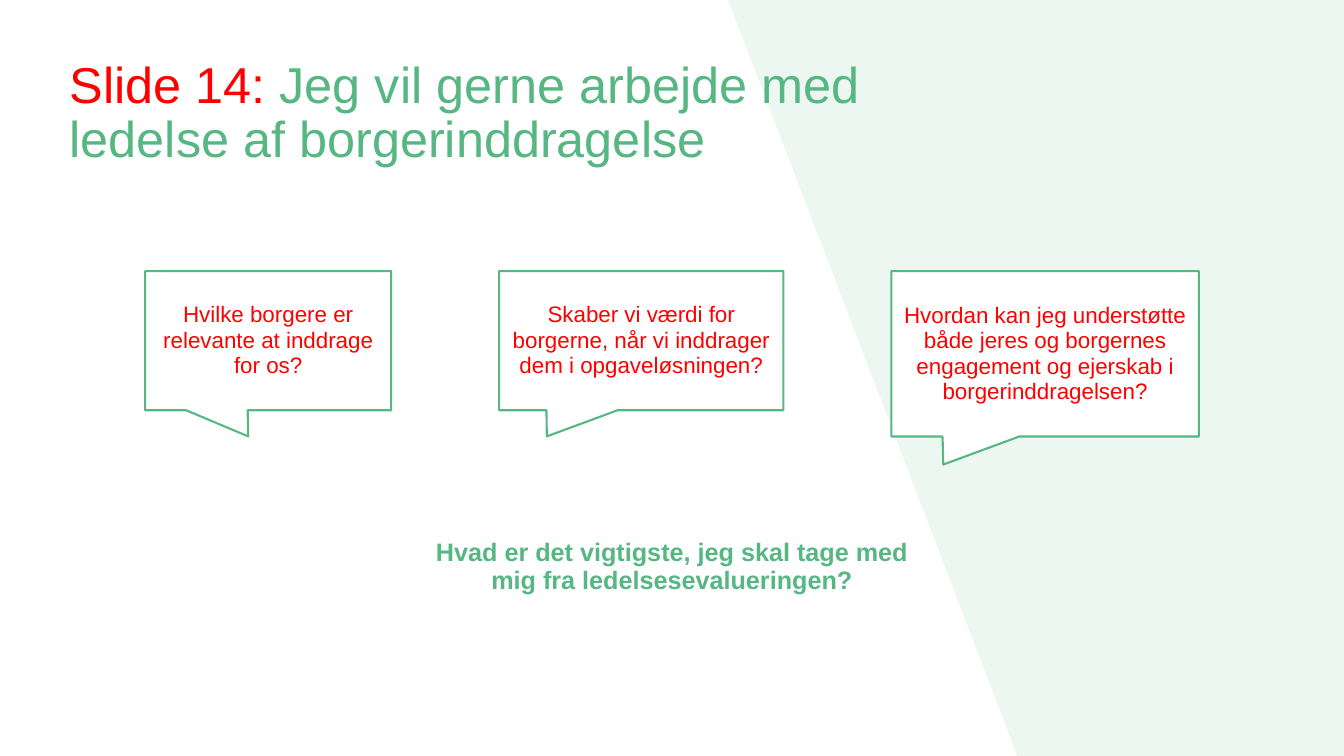
from lxml import etree
from pptx import Presentation
from pptx.dml.color import RGBColor
from pptx.enum import shapes, text
from pptx.oxml.ns import qn
from pptx.util import Inches, Pt

COLOURS = {"green": "56B783", "red": "FF0000", "white": "FFFFFF"}
FONT = "Arial"

# width, height, pointer adjustments, question
CALLOUTS = [
    (2.44, 1.38, (-0.081, 0.688), "Hvilke borgere er relevante at inddrage for os?"),
    (2.82, 1.38, (-0.332, 0.688),
     "Skaber vi værdi for borgerne, når vi inddrager dem i opgaveløsningen?"),
    (3.05, 1.64, (-0.331, 0.67),
     "Hvordan kan jeg understøtte både jeres og borgernes engagement "
     "og ejerskab i borgerinddragelsen?"),
]


def rgb(name):
    return RGBColor.from_string(COLOURS[name])


def format_run(run, size, colour, bold=False):
    run.font.name = FONT
    run.font.size = Pt(size)
    run.font.bold = bold
    run.font.color.rgb = rgb(colour)


def set_centred_text(shape, wording, size, colour, bold=False):
    frame = shape.text_frame
    frame.word_wrap = True
    frame.text = wording
    paragraph = frame.paragraphs[0]
    paragraph.alignment = text.PP_ALIGN.CENTER
    paragraph.line_spacing = 0.95
    format_run(paragraph.runs[0], size, colour, bold)


def add_background_band(slide, left, top, width, height):
    """Draw the pale green area whose left edge slants to the right."""
    slant = 2.87
    corners = [(left + slant, top + height), (left + width, top + height),
               (left + width, top)]
    builder = slide.shapes.build_freeform(Inches(left), Inches(top), scale=1.0)
    builder.add_line_segments([(Inches(x), Inches(y)) for x, y in corners])
    band = builder.convert_to_shape()
    band.shadow.inherit = False
    band.line.fill.background()
    band.fill.solid()
    band.fill.fore_color.rgb = rgb("green")
    colour = band.fill._xPr.find(qn("a:solidFill"))[0]
    etree.SubElement(colour, qn("a:alpha"), val="10000")


def place_title(slide, left, top, width, height):
    title = slide.shapes.title
    title.left, title.top = Inches(left), Inches(top)
    title.width, title.height = Inches(width), Inches(height)
    frame = title.text_frame
    frame.auto_size = text.MSO_AUTO_SIZE.NONE
    frame.vertical_anchor = text.MSO_ANCHOR.MIDDLE
    paragraph = frame.paragraphs[0]
    paragraph.alignment = text.PP_ALIGN.LEFT
    paragraph.line_spacing = 0.9
    for wording, colour in (
            ("Slide 14:", "red"),
            (" Jeg vil gerne arbejde med ledelse af borgerinddragelse", "green")):
        run = paragraph.add_run()
        run.text = wording
        format_run(run, 36, colour)


def add_callouts(slide, left, top, gap):
    for width, height, pointer, question in CALLOUTS:
        callout = slide.shapes.add_shape(
            shapes.MSO_SHAPE.RECTANGULAR_CALLOUT,
            Inches(left), Inches(top), Inches(width), Inches(height))
        callout.adjustments[0], callout.adjustments[1] = pointer
        callout.shadow.inherit = False
        callout.fill.solid()
        callout.fill.fore_color.rgb = rgb("white")
        callout.line.color.rgb = rgb("green")
        callout.line.width = Pt(1.5)
        callout.text_frame.vertical_anchor = text.MSO_ANCHOR.MIDDLE
        set_centred_text(callout, question, 16, "red")
        left += width + gap


def add_closing_question(slide, left, top, width, height):
    box = slide.shapes.add_textbox(
        Inches(left), Inches(top), Inches(width), Inches(height))
    set_centred_text(
        box, "Hvad er det vigtigste, jeg skal tage med mig fra ledelsesevalueringen?",
        18, "green", bold=True)


def main():
    presentation = Presentation()
    presentation.slide_width = Inches(13.33)
    presentation.slide_height = Inches(7.5)
    slide = presentation.slides.add_slide(presentation.slide_layouts[5])
    add_background_band(slide, 7.22, 0, 6.11, 7.5)
    # The title placeholder belongs in front of the band.
    slide.shapes._spTree.append(slide.shapes.title._element)
    place_title(slide, 0.59, 0.58, 8.74, 1.11)
    add_callouts(slide, 1.44, 2.69, 1.07)
    add_closing_question(slide, 4.2, 5.29, 4.93, 0.68)
    presentation.save("out.pptx")


if __name__ == "__main__":
    main()
